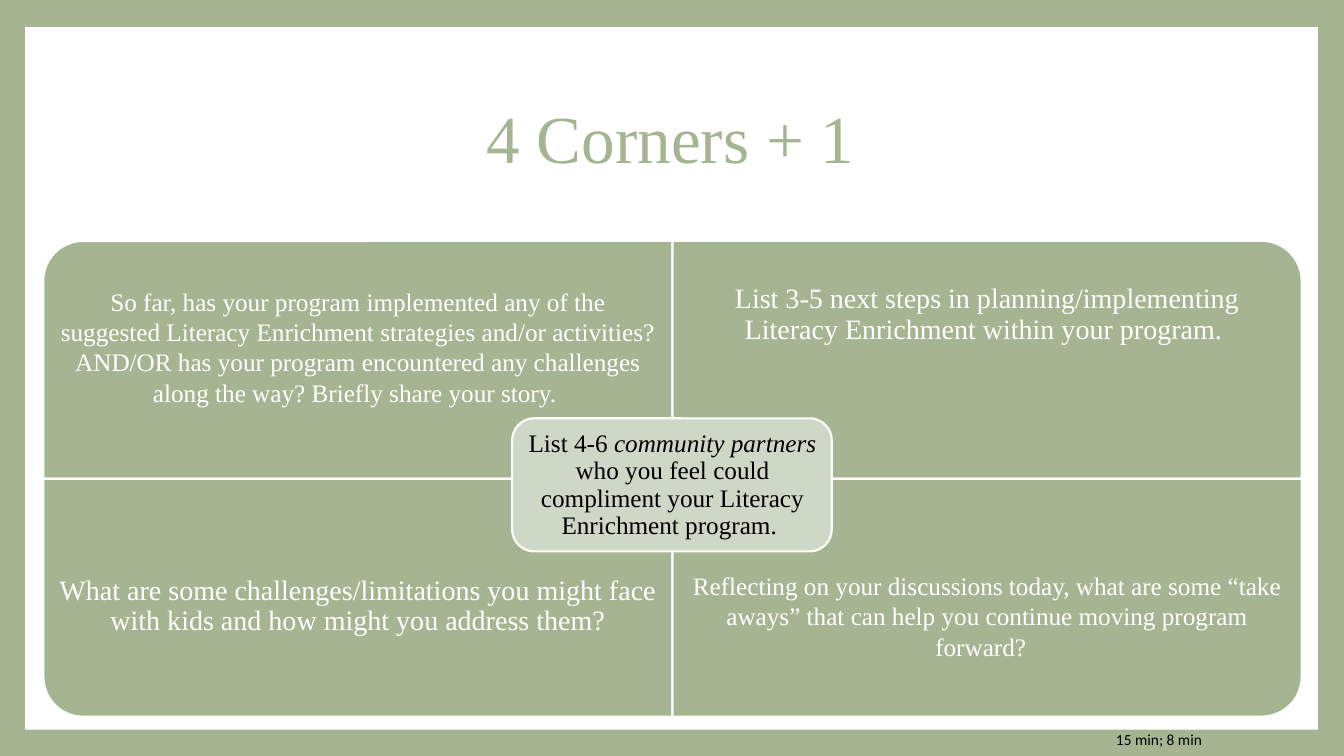
from pptx import Presentation
from pptx.dml.color import RGBColor
from pptx.enum.shapes import MSO_SHAPE as Shape
from pptx.enum.text import MSO_ANCHOR as Anchor, PP_ALIGN as Align
from pptx.util import Inches, Pt

COLORS = {"sage": "A5B592", "pale": "CFD7C7", "white": "FFFFFF", "black": "000000"}
SERIF = "Times New Roman"

# Grid of four corners
LEFT, TOP = 0.43, 2.39
WIDTH, HEIGHT = 6.24, 2.36
TEXT_H = 1.77

# Column, row, rotation, text, size, line spacing, inset, extra top, extra bottom
CORNERS = [
    (0, 0, 270, "So far, has your program implemented any of the suggested Literacy "
     "Enrichment strategies and/or activities? AND/OR has your program encountered "
     "any challenges along the way? Briefly share your story. ", 18, 1, 0.14, 0.33, 0),
    (1, 0, 0, "List 3-5 next steps in planning/implementing Literacy Enrichment "
     "within your program. ", 20, 0.9, 0.16, 0, 0.3),
    (0, 1, 180, "What are some challenges/limitations you might face with kids and "
     "how might you address them?", 20, 0.9, 0.16, 0, 0.41),
    (1, 1, 90, "Reflecting on your discussions today, what are some “take aways” that "
     "can help you continue moving program forward?  ", 18, 1, 0.14, 0, 0.23),
]
CENTER = [("List 4-6 ", False), ("community partners ", True),
          ("who you feel could compliment your Literacy Enrichment program. ", False)]


def color(name):
    return RGBColor.from_string(COLORS[name])


def add_panel(slide, kind, x, y, w, h, fill, edge=True, turn=0):
    panel = slide.shapes.add_shape(kind, Inches(x), Inches(y), Inches(w), Inches(h))
    panel.shadow.inherit = False
    panel.rotation = turn
    panel.fill.solid()
    panel.fill.fore_color.rgb = color(fill)
    if edge:
        panel.line.color.rgb = color("white")
        panel.line.width = Pt(1.5)
    else:
        panel.line.fill.background()


def add_text(slide, x, y, w, h, runs, size, ink, font=SERIF, align=Align.CENTER,
             anchor=Anchor.MIDDLE, space=0.9, pads=(0.1, 0.05, 0.1, 0.05)):
    box = slide.shapes.add_textbox(Inches(x), Inches(y), Inches(w), Inches(h))
    frame = box.text_frame
    frame.word_wrap = True
    frame.vertical_anchor = anchor
    (frame.margin_left, frame.margin_top,
     frame.margin_right, frame.margin_bottom) = map(Inches, pads)
    para = frame.paragraphs[0]
    para.alignment = align
    para.line_spacing = space
    for text, slant in runs:
        run = para.add_run()
        run.text = text
        run.font.name = font
        run.font.size = Pt(size)
        run.font.italic = slant
        run.font.color.rgb = color(ink)


def add_corner(slide, col, row, turn, text, size, space, pad, above, below):
    x, y = LEFT + col * WIDTH, TOP + row * HEIGHT
    # A quarter turn swaps the sides about the same center
    w, h = (HEIGHT, WIDTH) if turn % 180 else (WIDTH, HEIGHT)
    add_panel(slide, Shape.ROUND_1_RECTANGLE, x + (WIDTH - w) / 2,
              y + (HEIGHT - h) / 2, w, h, "sage", turn=turn)
    # Text keeps to the outer part of its corner
    add_text(slide, x, y + row * (HEIGHT - TEXT_H), WIDTH, TEXT_H, [(text, False)],
             size, "white", space=space, pads=(pad, pad + above, pad, pad + below))


def main():
    deck = Presentation()
    deck.slide_width, deck.slide_height = Inches(13.33), Inches(7.5)
    slide = deck.slides.add_slide(deck.slide_layouts[6])

    # Frame and title
    back = slide.background.fill
    back.solid()
    back.fore_color.rgb = color("sage")
    add_panel(slide, Shape.RECTANGLE, 0.25, 0.27, 12.82, 6.97, "white", edge=False)
    add_text(slide, 1.25, 0.67, 10.8, 1.48, [("4 Corners + 1", False)], 48, "sage")

    # Four corners
    for corner in CORNERS:
        add_corner(slide, *corner)

    # Center card
    add_panel(slide, Shape.ROUNDED_RECTANGLE, 5.08, 4.15, 3.17, 1.32, "pale")
    add_text(slide, 5.15, 4.22, 3.04, 1.19, CENTER, 18, "black", pads=(0.07,) * 4)

    # Timing
    add_text(slide, 10.97, 7.19, 1.73, 0.29, [("15 min; 8 min", False)], 11, "black",
             font="Calibri", align=Align.LEFT, anchor=Anchor.TOP, space=1)

    deck.save("out.pptx")


if __name__ == "__main__":
    main()
